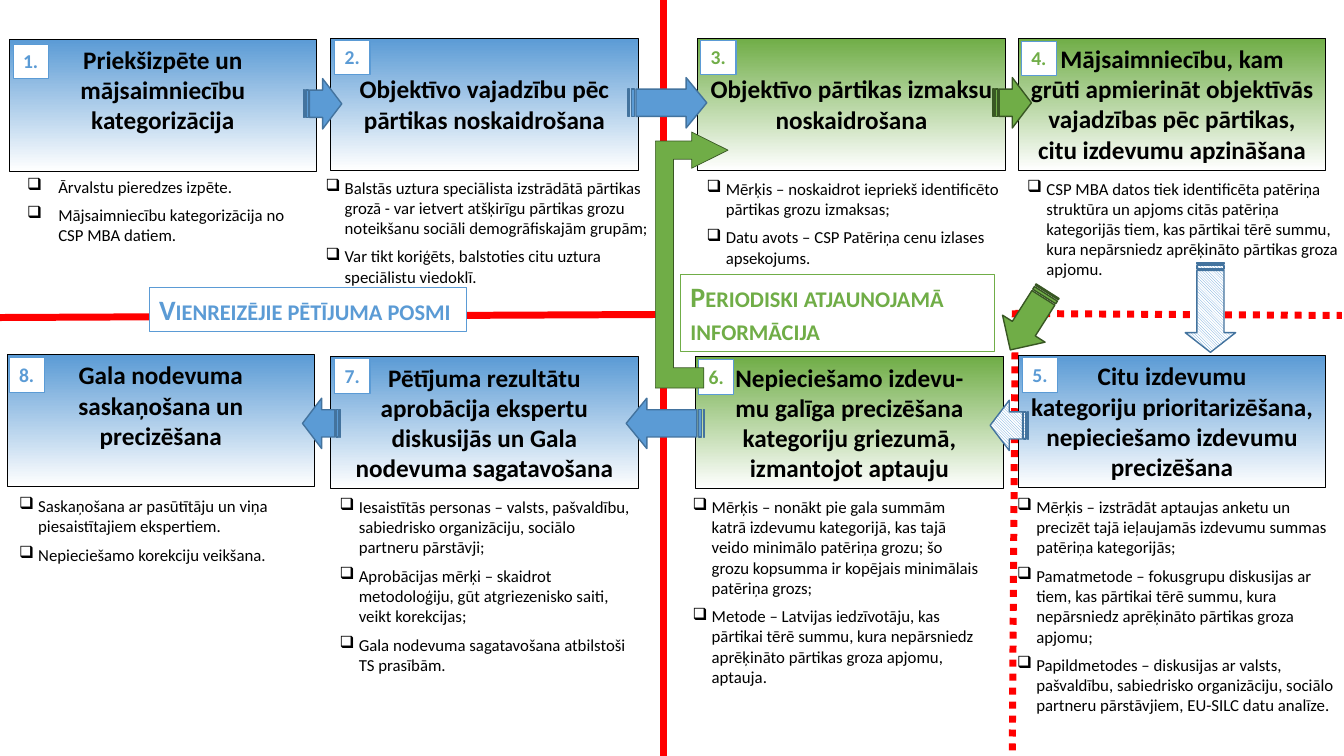
from dataclasses import dataclass

from lxml.etree import SubElement
from pptx import Presentation
from pptx.dml.color import RGBColor
from pptx.enum.dml import MSO_LINE, MSO_PATTERN
from pptx.enum.shapes import MSO_CONNECTOR, MSO_SHAPE
from pptx.enum.text import MSO_ANCHOR, PP_ALIGN
from pptx.oxml.ns import qn
from pptx.util import Inches, Pt


@dataclass(frozen=True)
class Theme:
    font: str = "Calibri"
    blue: RGBColor = RGBColor(0x5B, 0x9B, 0xD5)
    dark_blue: RGBColor = RGBColor(0x43, 0x73, 0x9E)
    green: RGBColor = RGBColor(0x70, 0xAD, 0x47)
    dark_green: RGBColor = RGBColor(0x38, 0x57, 0x23)
    red: RGBColor = RGBColor(0xFF, 0, 0)
    black: RGBColor = RGBColor(0, 0, 0)
    white: RGBColor = RGBColor(0xFF, 0xFF, 0xFF)
    phase_size: int = 20
    title_size: int = 18
    badge_size: int = 14
    body_size: int = 12


THEME = Theme()
BLUE, GREEN = THEME.blue, THEME.green
STEP_WIDTH, STEP_HEIGHT = 3.05, 1.31

# number, left, top, colour, title paragraphs, title top inset, badge offset
STEPS = [
    (1, 0.09, 0.39, BLUE, ["Priekšizpēte un mājsaimniecību kategorizācija"], 0.05, (0.04, 0.05)),
    (2, 3.28, 0.38, BLUE, ["Objektīvo vajadzību pēc pārtikas noskaidrošana"], 0.35, (0.04, 0.02)),
    (3, 6.92, 0.38, GREEN, ["Objektīvo pārtikas izmaksu noskaidrošana"], 0.35, (0.03, 0.02)),
    (4, 10.1, 0.38, GREEN, ["Mājsaimniecību, kam",
     "grūti apmierināt objektīvās vajadzības pēc pārtikas, citu izdevumu apzināšana"],
     0.05, (0.03, 0.03)),
    (5, 10.1, 3.53, BLUE, ["Citu izdevumu",
     "kategoriju prioritarizēšana, nepieciešamo izdevumu precizēšana"], 0.05, (0.04, 0.02)),
    (6, 6.9, 3.54, GREEN, ["Nepieciešamo izdevu-",
     "mu galīga precizēšana kategoriju griezumā, izmantojot aptauju"], 0.05, (0.03, 0.03)),
    (7, 3.28, 3.54, BLUE, ["Pētījuma rezultātu aprobācija ekspertu diskusijās un Gala "
     "nodevuma sagatavošana"], 0.05, (0.04, 0.02)),
    (8, 0.07, 3.52, BLUE, ["Gala nodevuma saskaņošana un precizēšana"], 0.05, (0.02, 0.03)),
]

# box, indent, bullet texts
DETAILS = [
    ((0.17, 1.7, 2.8, 0.79), 0.31, [
        "Ārvalstu pieredzes izpēte.",
        "Mājsaimniecību kategorizācija no CSP MBA datiem."]),
    ((3.13, 1.71, 3.45, 1.19), 0.19, [
        "Balstās uztura speciālista izstrādātā pārtikas grozā - var ietvert atšķirīgu "
        "pārtikas grozu noteikšanu sociāli demogrāfiskajām grupām;",
        "Var tikt koriģēts, balstoties citu uztura speciālistu viedoklī."]),
    ((6.91, 1.72, 3.18, 0.99), 0.19, [
        "Mērķis – noskaidrot iepriekš identificēto pārtikas grozu izmaksas;",
        "Datu avots – CSP Patēriņa cenu izlases apsekojums."]),
    ((10.09, 1.72, 3.37, 1.11), 0.19, [
        "CSP MBA datos tiek identificēta patēriņa struktūra un apjoms citās patēriņa "
        "kategorijās tiem, kas pārtikai tērē summu, kura nepārsniedz aprēķināto "
        "pārtikas groza apjomu."]),
    ((9.99, 4.88, 3.36, 2.29), 0.19, [
        "Mērķis – izstrādāt aptaujas anketu un precizēt tajā ieļaujamās izdevumu "
        "summas patēriņa kategorijās;",
        "Pamatmetode – fokusgrupu diskusijas ar tiem, kas pārtikai tērē summu, kura "
        "nepārsniedz aprēķināto pārtikas groza apjomu;",
        "Papildmetodes – diskusijas ar valsts, pašvaldību, sabiedrisko organizāciju, "
        "sociālo partneru pārstāvjiem, EU-SILC datu analīze."]),
    ((6.77, 4.88, 3.05, 2), 0.19, [
        "Mērķis – nonākt pie gala summām katrā izdevumu kategorijā, kas tajā veido "
        "minimālo patēriņa grozu; šo grozu kopsumma ir kopējais minimālais patēriņa grozs;",
        "Metode – Latvijas iedzīvotāju, kas pārtikai tērē summu, kura nepārsniedz "
        "aprēķināto pārtikas groza apjomu, aptauja."]),
    ((3.27, 4.88, 3.09, 1.88), 0.19, [
        "Iesaistītās personas – valsts, pašvaldību, sabiedrisko organizāciju, sociālo "
        "partneru pārstāvji;",
        "Aprobācijas mērķi – skaidrot metodoloģiju, gūt atgriezenisko saiti, veikt korekcijas;",
        "Gala nodevuma sagatavošana atbilstoši TS prasībām."]),
    ((0.09, 4.87, 2.81, 0.79), 0.19, [
        "Saskaņošana ar pasūtītāju un viņa piesaistītajiem ekspertiem.",
        "Nepieciešamo korekciju veikšana."]),
]

# left, top, width, rotation, head length, fill, outline, hatched
ARROWS = [
    (3.01, 0.78, 0.38, 0, 0.5, BLUE, THEME.dark_blue, False),
    (6.23, 0.77, 0.78, 0, 0.41, BLUE, THEME.dark_blue, False),
    (9.85, 0.77, 0.38, 0, 0.5, GREEN, THEME.dark_green, False),
    (11.56, 2.8, 0.89, 90, 0.39, BLUE, THEME.dark_blue, True),
    (9.82, 3.97, 0.38, 180, 0.5, BLUE, THEME.dark_blue, True),
    (3, 3.95, 0.38, 180, 0.5, BLUE, THEME.dark_blue, False),
    (6.21, 3.95, 0.78, 180, 0.41, BLUE, THEME.dark_blue, False),
    (9.86, 2.93, 0.69, 122.4, 0.5, GREEN, THEME.dark_green, False),
]

# start, end, dotted
DIVIDERS = [
    ((10.07, 3.11), (13.31, 3.13), True),
    ((10.07, 3.08), (10.04, 7.5), True),
    ((-0.01, 3.15), (6.57, 3.12), False),
    ((6.58, -0.01), (6.58, 7.5), False),
]

RETURN_LOOP = [(6.5, 1.4), (6.86, 1.4), (6.86, 1.31), (7.22, 1.49), (6.86, 1.67), (6.86, 1.58),
               (6.68, 1.58), (6.68, 3.65), (6.98, 3.65), (6.98, 3.85), (6.5, 3.85)]


class ProcessSlide:
    def __init__(self, slide, theme):
        self.slide, self.theme = slide, theme

    def divider(self, start, end, dotted):
        line = self.slide.shapes.add_connector(
            MSO_CONNECTOR.STRAIGHT, *map(Inches, start + end))
        line.line.color.rgb = self.theme.red
        line.line.width = Pt(5)
        if dotted:
            line.line.dash_style = MSO_LINE.ROUND_DOT
        SubElement(line._element.spPr, qn("a:effectLst"))

    def outline(self, shape, color, width):
        shape.shadow.inherit = False
        shape.line.color.rgb = color
        shape.line.width = Pt(width)

    def set_text(self, frame, texts, size, color, bold=True, align=PP_ALIGN.LEFT, wrap=True):
        frame.word_wrap = wrap
        frame.vertical_anchor = MSO_ANCHOR.TOP
        for index, text in enumerate(texts):
            paragraph = frame.paragraphs[0] if index == 0 else frame.add_paragraph()
            paragraph.text = text
            paragraph.alignment = align
            font = paragraph.font
            font.name, font.size, font.bold = self.theme.font, Pt(size), bold
            font.color.rgb = color

    def box(self, bounds, line_color):
        shape = self.slide.shapes.add_shape(MSO_SHAPE.RECTANGLE, *map(Inches, bounds))
        self.outline(shape, line_color, 0.75)
        return shape

    def step(self, number, left, top, color, title, inset, badge_offset):
        """Draw a gradient title box with its number badge."""
        panel = self.box((left, top, STEP_WIDTH, STEP_HEIGHT), self.theme.black)
        panel.fill.gradient()
        panel.fill.gradient_angle = 270
        for stop, shade in zip(panel.fill.gradient_stops, (color, self.theme.white)):
            stop.color.rgb = shade
        panel.text_frame.margin_top = Inches(inset)
        self.set_text(panel.text_frame, title, self.theme.title_size, self.theme.black,
                      align=PP_ALIGN.CENTER)
        dx, dy = badge_offset
        badge = self.box((left + dx, top + dy, 0.35, 0.34), self.theme.blue)
        badge.fill.solid()
        badge.fill.fore_color.rgb = self.theme.white
        self.set_text(badge.text_frame, [f"{number}."], self.theme.badge_size, color, wrap=False)

    def details(self, bounds, indent, texts):
        frame = self.slide.shapes.add_textbox(*map(Inches, bounds)).text_frame
        self.set_text(frame, texts, self.theme.body_size, self.theme.black, bold=False)
        for paragraph in frame.paragraphs:
            paragraph.space_after = Pt(6)
            properties = paragraph._p.get_or_add_pPr()
            properties.set("marL", str(Inches(indent)))
            properties.set("indent", str(-Inches(indent)))
            bullet = properties.makeelement(qn("a:buChar"), {"char": "❑"})
            properties.find(qn("a:defRPr")).addprevious(bullet)

    def arrow(self, left, top, width, rotation, head, color, line_color, hatched):
        arrow = self.slide.shapes.add_shape(
            MSO_SHAPE.STRIPED_RIGHT_ARROW, *map(Inches, (left, top, width, 0.5)))
        arrow.adjustments[0], arrow.adjustments[1] = 0.54, head
        arrow.rotation = rotation
        self.outline(arrow, line_color, 1)
        if hatched:
            arrow.fill.patterned()
            arrow.fill.pattern = MSO_PATTERN.DARK_DOWNWARD_DIAGONAL
            arrow.fill.back_color.rgb = self.theme.white
        else:
            arrow.fill.solid()
        arrow.fill.fore_color.rgb = color

    def phase(self, bounds, text, color, filled, wrap):
        label = self.box(bounds, color)
        if filled:
            label.fill.solid()
            label.fill.fore_color.rgb = self.theme.white
        else:
            label.fill.background()
        self.set_text(label.text_frame, [text], self.theme.phase_size, color, wrap=wrap)
        for run in label.text_frame.paragraphs[0].runs:
            run._r.get_or_add_rPr().set("cap", "small")

    def loop(self, points):
        start, *rest = [tuple(map(Inches, point)) for point in points]
        builder = self.slide.shapes.build_freeform(*start)
        builder.add_line_segments(rest, close=True)
        loop = builder.convert_to_shape()
        loop.fill.solid()
        loop.fill.fore_color.rgb = self.theme.green
        self.outline(loop, self.theme.dark_green, 0.5)


def main():
    deck = Presentation()
    deck.slide_width, deck.slide_height = Inches(13.33), Inches(7.5)
    process = ProcessSlide(deck.slides.add_slide(deck.slide_layouts[6]), THEME)
    for method, rows in ((process.divider, DIVIDERS), (process.step, STEPS),
                         (process.details, DETAILS), (process.arrow, ARROWS)):
        for row in rows:
            method(*row)
    process.phase((6.75, 2.72, 3.11, 0.77), "Periodiski atjaunojamā informācija", GREEN, False, True)
    process.phase((1.48, 2.85, 3.15, 0.44), "Vienreizējie pētījuma posmi", BLUE, True, False)
    process.loop(RETURN_LOOP)
    deck.save("out.pptx")


if __name__ == "__main__":
    main()
